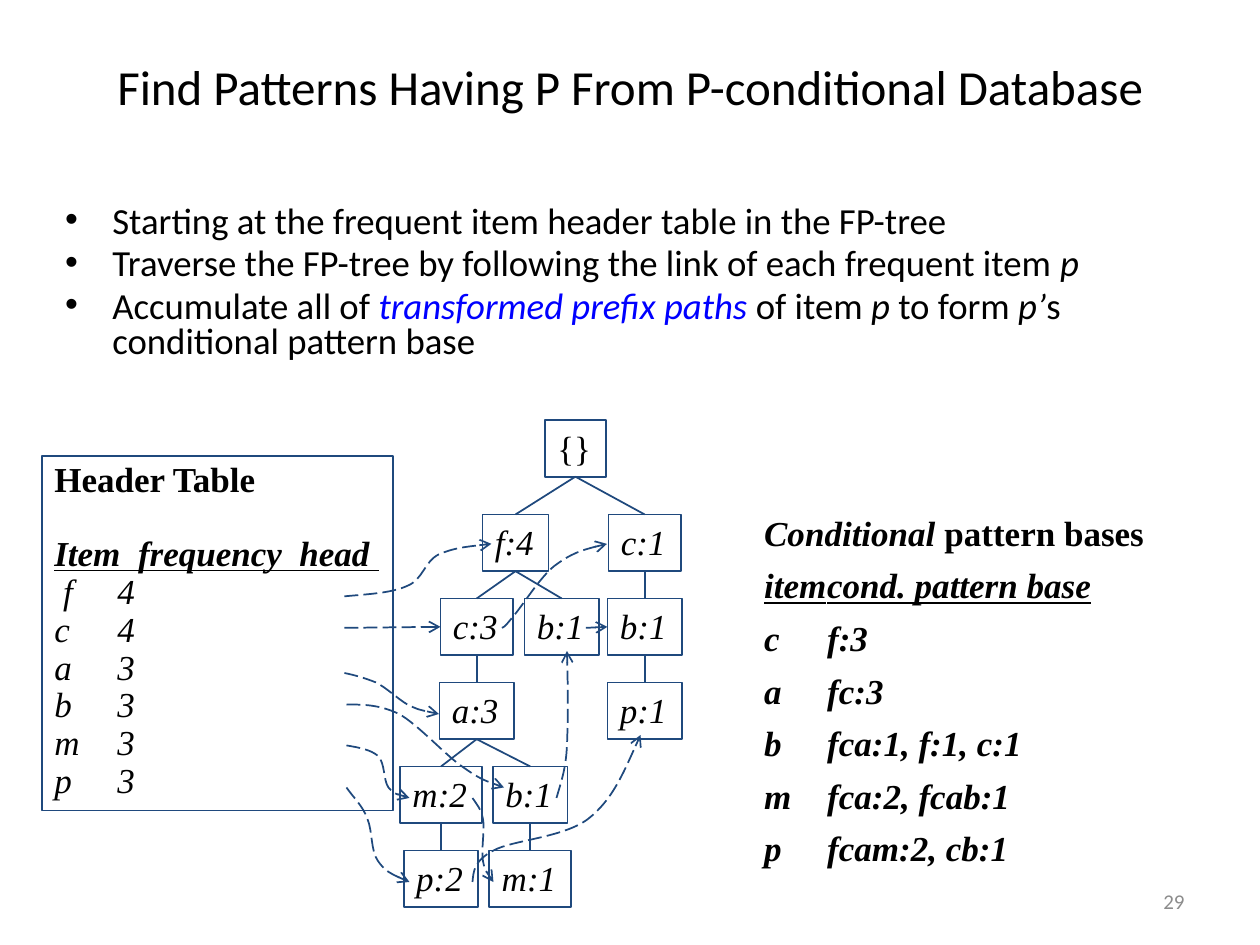
from lxml import etree
from pptx import Presentation
from pptx.dml.color import RGBColor
from pptx.enum.dml import MSO_LINE
from pptx.enum.shapes import MSO_CONNECTOR, MSO_SHAPE
from pptx.enum.text import MSO_ANCHOR, MSO_AUTO_SIZE, PP_ALIGN
from pptx.oxml.ns import qn
from pptx.util import Inches, Pt

RECTANGLE = MSO_SHAPE.RECTANGLE
STRAIGHT = MSO_CONNECTOR.STRAIGHT
LONG_DASH = MSO_LINE.LONG_DASH
TOP, MIDDLE = MSO_ANCHOR.TOP, MSO_ANCHOR.MIDDLE
LEFT, CENTER, RIGHT = PP_ALIGN.LEFT, PP_ALIGN.CENTER, PP_ALIGN.RIGHT
FIXED = MSO_AUTO_SIZE.NONE
TOP_SIDE, LEFT_SIDE, BOTTOM_SIDE = 0, 1, 2

COLUMNS, ROWS = 120, 90
CELL = Inches(10) / COLUMNS
NODE_HEIGHT = 5.4

# name: (text, centre column, top row, width in columns)
NODES = {
    "root": ("{}", 54.8, 40, 5.8),
    "f4": ("f:4", 49.1, 49, 6.3),
    "c1": ("c:1", 61.4, 49, 6.9),
    "c3": ("c:3", 45.4, 57, 6.9),
    "b1 under f4": ("b:1", 53.5, 57, 7.1),
    "b1 under c1": ("b:1", 61.4, 57, 7.1),
    "a3": ("a:3", 45.4, 65, 7.1),
    "p1": ("p:1", 61.4, 65, 7.1),
    "m2": ("m:2", 42, 73, 7.8),
    "b1 under a3": ("b:1", 50.5, 73, 7.1),
    "p2": ("p:2", 42, 81, 7.1),
    "m1": ("m:1", 50.5, 81, 7.8),
}
BRANCHES = [
    ("root", "f4"), ("root", "c1"), ("f4", "c3"), ("f4", "b1 under f4"),
    ("c1", "b1 under c1"), ("b1 under c1", "p1"), ("c3", "a3"), ("a3", "m2"),
    ("a3", "b1 under a3"), ("m2", "p2"), ("b1 under a3", "m1"),
]
# (start column, start row, node whose left side is reached)
STRAIGHT_LINKS = [(32.8, 59.8, "c3"), (55.8, 59.8, "b1 under c1")]
# start point, then two control points and an end point for each Bézier part
CURVED_LINKS = [
    [(32.8, 56.8), (35, 56.6), (37.3, 56.5), (38.8, 55.8), (40.3, 55.2),
     (40.4, 53.5), (41.8, 52.8), (43.2, 52.2), (45, 52), (46.8, 51.8)],
    [(47.8, 59.8), (47.9, 59.8), (48, 59.8), (48.8, 58.8), (49.7, 57.8),
     (51.4, 55), (52.8, 53.9), (54.4, 52.7), (56, 52.2), (57.8, 51.8)],
    [(32.8, 64.1), (33.8, 64.3), (34.8, 64.6), (35.8, 65), (36.8, 65.5),
     (37.8, 66.5), (38.8, 67.1), (39.8, 67.6), (40.8, 67.8), (41.8, 68)],
    [(33, 67.1), (34.6, 67.1), (36.1, 67.1), (38, 68), (39.8, 69),
     (42.4, 71.9), (44, 73), (45.7, 74.2), (46.8, 74.6), (48, 75)],
    [(53, 76), (53.4, 74.6), (53.9, 73.3), (54, 71), (54.1, 68.6),
     (54.1, 65.4), (54, 62)],
    [(33, 71), (34.2, 71.2), (35.3, 71.4), (36, 72), (36.7, 72.7),
     (36.5, 74.3), (37, 75), (37.6, 75.7), (38.3, 75.8), (39, 76)],
    [(45, 76), (45.4, 76.6), (45.8, 77), (46, 78), (46.2, 79),
     (45.8, 81), (46, 82), (46.2, 83), (46.6, 83.5), (47, 84)],
    [(33, 75), (33.7, 76), (34.6, 76.8), (35, 78), (35.5, 79.2),
     (35.3, 81), (36, 82), (36.7, 83), (37.8, 83.5), (39, 84)],
    [(45, 84), (45.1, 83), (45.1, 82), (47, 81), (48.8, 80),
     (53.6, 79.8), (56, 78), (58.3, 76.2), (59.6, 73.1), (61, 70)],
]

ITALIC = {"italic": True}
STEPS = [
    [("Starting at the frequent item header table in the FP-tree", {})],
    [("Traverse the FP-tree by following the link of each frequent item ", {}),
     ("p", ITALIC)],
    [("Accumulate all of ", {}),
     ("transformed prefix paths", {"italic": True, "color": "0000FF"}),
     (" of item ", {}), ("p ", ITALIC), ("to form ", {}), ("p’", ITALIC),
     ("s conditional pattern base", {})],
]
FREQUENCIES = [(" f", 4), ("c", 4), ("a", 3), ("b", 3), ("m", 3), ("p", 3)]
PATTERN_BASES = [("c", "f:3"), ("a", "fc:3"), ("b", "fca:1, f:1, c:1"),
                 ("m", "fca:2, fcab:1"), ("p", "fcam:2, cb:1")]


def rgb(hex_color):
    return RGBColor.from_string(hex_color)


def cells(*counts):
    return [round(count * CELL) for count in counts]


def write(paragraph, text, font="Times New Roman", size=20, color="000000",
          bold=False, italic=False, underline=False):
    run = paragraph.add_run()
    run.text = text
    run.font.name, run.font.size = font, Pt(size)
    run.font.color.rgb = rgb(color)
    run.font.bold, run.font.italic, run.font.underline = bold, italic, underline


class TreeSlide:
    line_color = "1F497D"

    def __init__(self, presentation):
        self.slide = presentation.slides.add_slide(presentation.slide_layouts[1])
        self.shapes = self.slide.shapes

    def fill_text(self, shape, paragraphs, align=LEFT, anchor=TOP, spacing=1.0,
                  before=0, wrap=True, **base):
        """Write paragraphs, each a list of (text, format) pairs."""
        frame = shape.text_frame
        frame.word_wrap, frame.auto_size = wrap, FIXED
        frame.vertical_anchor = anchor
        for index, runs in enumerate(paragraphs):
            paragraph = frame.add_paragraph() if index else frame.paragraphs[0]
            paragraph.alignment, paragraph.line_spacing = align, spacing
            paragraph.space_before = Pt(before)
            for text, changes in runs:
                write(paragraph, text, **{**base, **changes})
        return frame

    def placeholder(self, index, place, paragraphs, **style):
        holder = self.slide.placeholders[index]
        holder.left, holder.top, holder.width, holder.height = cells(*place)
        self.fill_text(holder, paragraphs, font="Calibri", **style)

    def text(self, place, paragraphs, **style):
        return self.fill_text(self.shapes.add_textbox(*cells(*place)), paragraphs, **style)

    def box(self, place, paragraphs, **style):
        shape = self.shapes.add_shape(RECTANGLE, *cells(*place))
        shape.fill.background()
        self.stroke(shape)
        shape.shadow.inherit = False
        self.fill_text(shape, paragraphs, wrap=False, **style)
        return shape

    def stroke(self, shape, arrow=False):
        shape.line.color.rgb = rgb(self.line_color)
        shape.line.width = Pt(1)
        if arrow:
            shape.line.dash_style = LONG_DASH
            outline = shape._element.spPr.find(qn("a:ln"))
            etree.SubElement(outline, qn("a:tailEnd"), type="arrow")

    def connector(self, start, end, arrow=False):
        line = self.shapes.add_connector(STRAIGHT, *cells(*start, *end))
        self.stroke(line, arrow)
        etree.SubElement(line._element.spPr, qn("a:effectLst"))
        return line

    def curve(self, points):
        """Draw a dashed arrow through Bézier parts of three points each."""
        start, *rest = [cells(*point) for point in points]
        builder = self.shapes.build_freeform(*start)
        builder.add_line_segments(rest, close=False)
        shape = builder.convert_to_shape()
        segments = shape._element.findall(".//" + qn("a:lnTo"))
        outline = segments[0].getparent()
        for first in range(0, len(segments), 3):
            bezier = etree.SubElement(outline, qn("a:cubicBezTo"))
            for segment in segments[first:first + 3]:
                bezier.append(segment[0])
                outline.remove(segment)
        shape.fill.background()
        self.stroke(shape, arrow=True)
        shape.shadow.inherit = False


def draw_tree(page):
    boxes = {}
    for name, (label, center, top, width) in NODES.items():
        boxes[name] = page.box((center - width / 2, top, width, NODE_HEIGHT),
                               [[(label, {"italic": name != "root"})]])
    for parent, child in BRANCHES:
        branch = page.connector((0, 0), (1, 1))
        branch.begin_connect(boxes[parent], BOTTOM_SIDE)
        branch.end_connect(boxes[child], TOP_SIDE)
    return boxes


def main():
    presentation = Presentation()
    presentation.slide_width, presentation.slide_height = cells(COLUMNS, ROWS)
    page = TreeSlide(presentation)

    page.placeholder(0, (0, 4, COLUMNS, 9),
                     [[("Find Patterns Having P From P-conditional Database", {})]],
                     size=28, align=CENTER, anchor=MIDDLE, spacing=0.9)
    page.placeholder(1, (5, 19, 110, 20), STEPS, size=21, spacing=0.8, before=4.2)
    page.text((86, 83.4, 28, 4.8), [[("29", {})]], font="Calibri", size=12,
              color="8C8C8C", align=RIGHT, anchor=MIDDLE)

    heading = {"italic": True, "underline": True}
    bases = [[("Conditional ", ITALIC), ("pattern bases", {})],
             [("item\tcond. pattern base", heading)]]
    bases += [[(f"{item}\t{base}", ITALIC)] for item, base in PATTERN_BASES]
    frame = page.text((71.6, 48.1, 43.7, 36.5), bases, bold=True, spacing=0.8, before=10.8)
    frame.paragraphs[0].line_spacing = 1.0

    boxes = draw_tree(page)

    counts = [[("Header Table", {"bold": True})],
              [("Item  frequency  head ", {"bold": True, **heading})]]
    counts += [[(f"{item}\t{count}", ITALIC)] for item, count in FREQUENCIES]
    table = page.box((4, 43.4, 33.4, 33.8), counts, spacing=0.9)
    table.text_frame.paragraphs[1].space_before = Pt(21)

    for column, row, target in STRAIGHT_LINKS:
        link = page.connector((column, row), (column + 1, row), arrow=True)
        link.end_connect(boxes[target], LEFT_SIDE)
    for points in CURVED_LINKS:
        page.curve(points)

    presentation.save("out.pptx")


if __name__ == "__main__":
    main()
